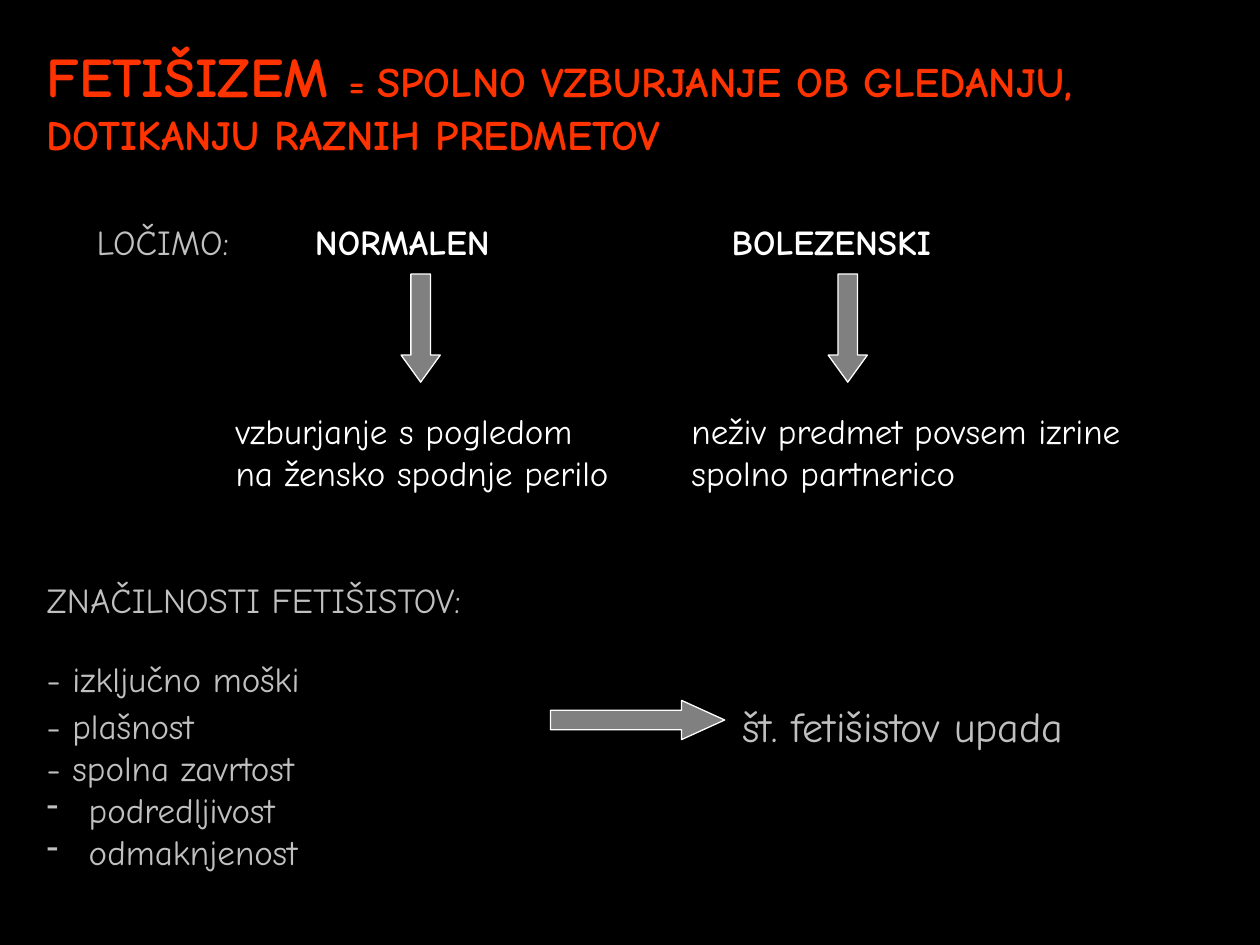
from lxml import etree
from pptx import Presentation, util as u
from pptx.dml.color import RGBColor
from pptx.enum import shapes, text
from pptx.oxml.ns import qn

BLACK = RGBColor(0x00, 0x00, 0x00)
WHITE = RGBColor(0xFF, 0xFF, 0xFF)
SILVER = RGBColor(0xC0, 0xC0, 0xC0)
GREY = RGBColor(0x80, 0x80, 0x80)
RED = RGBColor(0xFF, 0x33, 0x00)

LEFT = 0.69
LABEL_TOP, LABEL_HEIGHT = 4.32, 1.09
ARROW_HEIGHT = 0.79


class SlideBuilder:
    font = "Comic Neue"
    size = 20

    def __init__(self, deck):
        self.slide = deck.slides.add_slide(deck.slide_layouts[5])
        self.slide.background.fill.solid()
        self.slide.background.fill.fore_color.rgb = BLACK

    def add_span(self, para, words, color, size=None, bold=False):
        span = para.add_run()
        span.text = words
        span.font.name = self.font
        span.font.size = u.Pt(size or self.size)
        span.font.bold = bold
        span.font.color.rgb = color

    def title(self, left, top, width, height, lines):
        """Fill the title; each line is a list of (words, size) pairs."""
        box = self.slide.shapes.title
        box.left, box.top = u.Cm(left), u.Cm(top)
        box.width, box.height = u.Cm(width), u.Cm(height)
        frame = box.text_frame
        frame.auto_size = text.MSO_AUTO_SIZE.NONE
        frame.vertical_anchor = text.MSO_ANCHOR.TOP
        for index, line in enumerate(lines):
            para = frame.add_paragraph() if index else frame.paragraphs[0]
            para.alignment = text.PP_ALIGN.LEFT
            for words, size in line:
                self.add_span(para, words, RED, size, bold=True)

    def text_box(self, left, top, width, height, lines, color, size=None, bold=False):
        box = self.slide.shapes.add_textbox(u.Cm(left), u.Cm(top), u.Cm(width), u.Cm(height))
        frame = box.text_frame
        frame.word_wrap = True
        for index, words in enumerate(lines):
            para = frame.add_paragraph() if index else frame.paragraphs[0]
            self.add_span(para, words, color, size, bold)
        return frame.paragraphs

    def dash_bullet(self, para):
        properties = para._p.get_or_add_pPr()
        indent = u.Cm(0.85)
        properties.set("marL", str(indent))
        properties.set("indent", str(-indent))
        etree.SubElement(properties, qn("a:buChar")).set("char", "-")

    def arrow(self, left, top, length, head, rotation=0):
        arrow = self.slide.shapes.add_shape(
            shapes.MSO_SHAPE.RIGHT_ARROW,
            u.Cm(left), u.Cm(top), u.Cm(length), u.Cm(ARROW_HEIGHT))
        arrow.adjustments[0] = 0.5
        arrow.adjustments[1] = head
        arrow.rotation = rotation
        arrow.shadow.inherit = False
        arrow.fill.solid()
        arrow.fill.fore_color.rgb = GREY
        arrow.line.color.rgb = WHITE
        arrow.line.width = u.Pt(0.75)


def main():
    deck = Presentation()
    deck.slide_width, deck.slide_height = u.Cm(25.4), u.Cm(19.05)
    page = SlideBuilder(deck)

    page.title(LEFT, 0.71, 25.5, 2.62, [
        [("FETIŠIZEM ", 32), ("= ", 20), ("SPOLNO VZBURJANJE OB GLEDANJU,", 24)],
        [("DOTIKANJU RAZNIH PREDMETOV", 24)],
    ])

    page.text_box(1.7, LABEL_TOP, 3.66, LABEL_HEIGHT, ["LOČIMO:"], SILVER)
    kinds = [
        ("NORMALEN", 6.1, 4.65, 7.39, 4.5, 8.53,
         ["vzburjanje s pogledom", "na žensko spodnje perilo"]),
        ("BOLEZENSKI", 14.5, 5.16, 16, 13.69, 10.08,
         ["neživ predmet povsem izrine", "spolno partnerico"]),
    ]
    for name, left, width, arrow_left, note_left, note_width, note in kinds:
        page.text_box(left, LABEL_TOP, width, LABEL_HEIGHT, [name], WHITE, bold=True)
        page.text_box(note_left, 8.13, note_width, 1.96, note, WHITE)
        page.arrow(arrow_left, 6.22, 2.18, 0.69, rotation=90)

    page.text_box(LEFT, 13.13, 5.97, LABEL_HEIGHT, ["- izključno moški"], SILVER)
    traits = page.text_box(LEFT, 11.53, 10.77, 6.17, [
        "ZNAČILNOSTI FETIŠISTOV:", "- plašnost", "- spolna zavrtost",
        "podredljivost", "odmaknjenost"], SILVER)
    traits[1].space_before = u.Pt(48)
    for para in traits[3:]:
        page.dash_bullet(para)

    page.arrow(11.1, 14.12, 3.51, 1.1)
    page.text_box(14.71, 14, 8, 1.27, ["št. fetišistov upada"], SILVER, size=24)

    deck.save("out.pptx")


if __name__ == "__main__":
    main()
